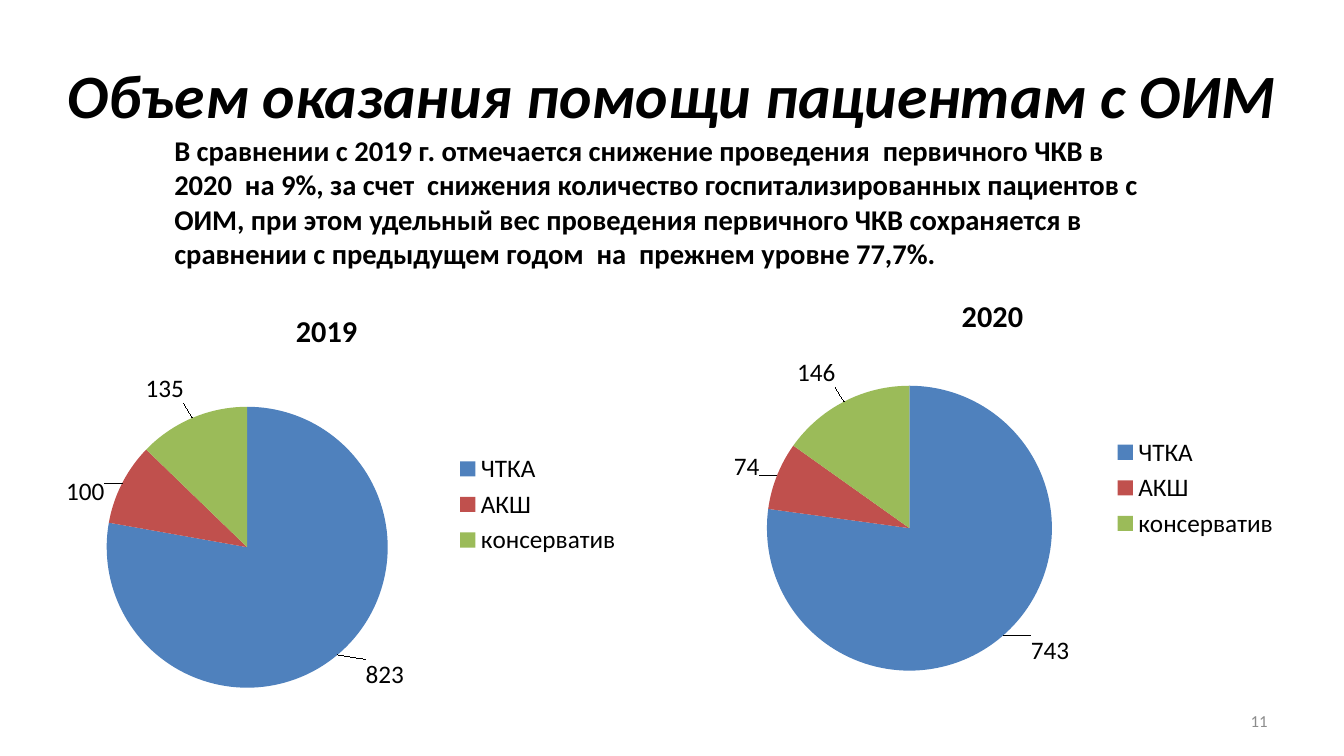
from pptx import Presentation
from pptx.chart.data import CategoryChartData
from pptx.dml.color import RGBColor
from pptx.enum.chart import XL_CHART_TYPE as Kind, XL_LABEL_POSITION as Spot, XL_LEGEND_POSITION as Side
from pptx.enum.text import MSO_ANCHOR as Anchor, PP_ALIGN as Align
from pptx.oxml import parse_xml
from pptx.oxml.ns import nsdecls, qn
from pptx.util import Inches, Pt

COLORS = {"text": "000000", "page": "8C8C8C",
          "ЧТКА": "4F81BD", "АКШ": "C0504D", "консерватив": "9BBB59"}
GROUPS = ["ЧТКА", "АКШ", "консерватив"]


def style(font, size, color="text", bold=False, italic=False):
    font.name, font.size = "Calibri", Pt(size)
    font.bold, font.italic = bold, italic
    font.color.rgb = RGBColor.from_string(COLORS[color])


def layout(x, y, w=None, h=None):
    """Manual layout in shares of the chart; without a size it is an offset."""
    parts = [("x", x), ("y", y)]
    modes = ""
    if w:
        parts += [("w", w), ("h", h)]
        modes = ('<c:layoutTarget val="inner"/>'
                 '<c:xMode val="edge"/><c:yMode val="edge"/>')
    body = "".join(f'<c:{tag} val="{val}"/>' for tag, val in parts)
    return parse_xml(f'<c:layout {nsdecls("c")}><c:manualLayout>'
                     f'{modes}{body}</c:manualLayout></c:layout>')


prs = Presentation()
prs.slide_width, prs.slide_height = Inches(13.33), Inches(7.5)
slide = prs.slides.add_slide(prs.slide_layouts[5])

title = slide.shapes.title
title.left, title.top = Inches(0), Inches(0.21)
title.width, title.height = Inches(13.33), Inches(1.45)
title.text_frame.text = "Объем оказания помощи пациентам с ОИМ"

note = slide.shapes.add_textbox(Inches(1.63), Inches(1.47), Inches(9.92), Inches(1.26))
note.text_frame.text = (
    "В сравнении с 2019 г. отмечается снижение проведения  первичного ЧКВ в "
    "2020  на 9%, за счет  снижения количество госпитализированных пациентов с "
    "ОИМ, при этом удельный вес проведения первичного ЧКВ сохраняется в "
    "сравнении с предыдущем годом  на  прежнем уровне 77,7%.")

page = slide.shapes.add_textbox(Inches(9.56), Inches(6.95), Inches(3.11), Inches(0.4))
page.text_frame.text = "11"

for box, anchor, align, look in [
        (title, Anchor.MIDDLE, Align.CENTER, (44, "text", True, True)),
        (note, Anchor.BOTTOM, Align.LEFT, (20.4, "text", True)),
        (page, Anchor.MIDDLE, Align.RIGHT, (12, "page"))]:
    frame = box.text_frame
    frame.word_wrap, frame.vertical_anchor = True, anchor
    frame.paragraphs[0].alignment = align
    style(frame.paragraphs[0].runs[0].font, *look)

# year, values, frame, pie area, label offsets
PIES = [
    ("2020", (743, 74, 146), (6.9, 2.73, 5.89, 4.22), (0.12, 0.26, 0.48, 0.67),
     [(0.04, -0.01), (-0.02, 0.02), (-0.01, -0.02)]),
    ("2019", (823, 100, 135), (0.21, 2.88, 6.06, 4.25), (0.14, 0.27, 0.46, 0.66),
     [(0.04, 0), (-0.02, 0.06), (-0.01, -0.02)]),
]
for year, values, place, area, shifts in PIES:
    data = CategoryChartData()
    data.categories = GROUPS
    data.add_series(year, values)
    chart = slide.shapes.add_chart(Kind.PIE, *map(Inches, place), data).chart
    style(chart.font, 18)

    chart.has_title = True
    head = chart.chart_title.text_frame
    head.text = year
    style(head.paragraphs[0].runs[0].font, 21.6, bold=True)

    chart.has_legend = True
    chart.legend.position = Side.RIGHT
    chart.legend.include_in_layout = False

    plot = chart.plots[0]
    plot.vary_by_categories = True
    series = plot.series[0]
    labels = series.data_labels
    labels.show_value = True
    labels.position = Spot.OUTSIDE_END
    for i, group in enumerate(GROUPS):
        point = series.points[i]
        point.format.fill.solid()
        point.format.fill.fore_color.rgb = RGBColor.from_string(COLORS[group])
        point.data_label.position = Spot.OUTSIDE_END

    root = chart.element
    for label, shift in zip(root.iter(qn("c:dLbl")), shifts):
        label.find(qn("c:idx")).addnext(layout(*shift))
    zone = root.find(".//" + qn("c:plotArea"))
    for old in zone.findall(qn("c:layout")):
        zone.remove(old)
    zone.insert(0, layout(*area))
    for lead in root.iter(qn("c:showLeaderLines")):
        lead.set("val", "1")

prs.save("out.pptx")
